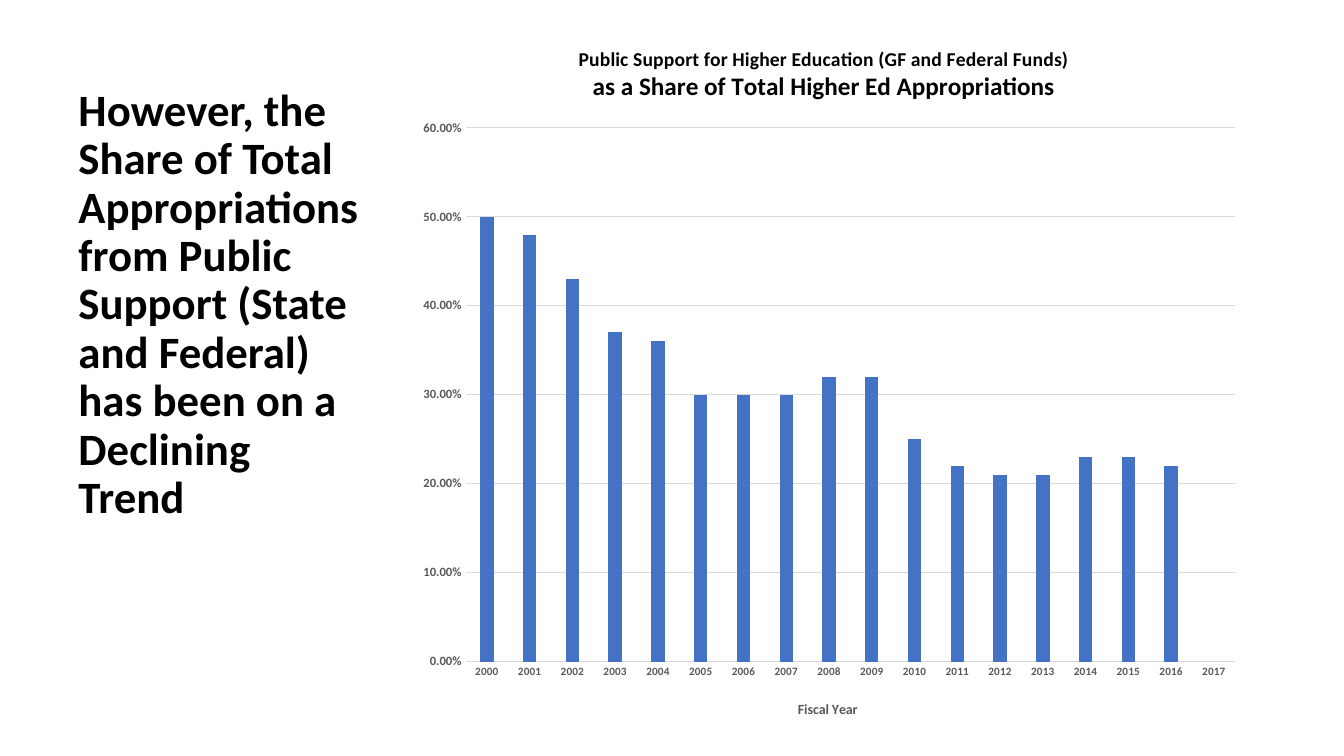
from lxml import etree
from pptx import Presentation
from pptx import util as u
from pptx.chart.data import CategoryChartData
from pptx.dml.color import RGBColor
from pptx.enum import chart as charts
from pptx.oxml.ns import qn

FONT = "Calibri"
COLORS = {"text": "000000", "label": "595959", "rule": "D9D9D9", "bar": "4472C4"}
FIRST_YEAR, LAST_YEAR = 2000, 2017
SHARES = [0.5, 0.48, 0.43, 0.37, 0.36, 0.3, 0.3, 0.3, 0.32,
          0.32, 0.25, 0.22, 0.21, 0.21, 0.23, 0.23, 0.22, None]


def color(name):
    return RGBColor.from_string(COLORS[name])


def format_font(font, size, tint="text", bold=True):
    font.name = FONT
    font.size = u.Pt(size)
    font.bold = bold
    font.color.rgb = color(tint)


def write_line(frame, words, size, tint="text", first=True, spacing=None):
    para = frame.paragraphs[0] if first else frame.add_paragraph()
    para.line_spacing = spacing
    span = para.add_run()
    span.text = words
    format_font(span.font, size, tint)


def add_text(page, words, left, top, width, height, **style):
    box = page.shapes.add_textbox(*map(u.Inches, (left, top, width, height)))
    box.text_frame.word_wrap = True
    write_line(box.text_frame, words, **style)


def place(element, **fractions):
    """Set a manual layout, in fractions of the chart area."""
    layout = element.find(qn("c:layout"))
    if layout is None:
        layout = etree.Element(qn("c:layout"))
        element.insert(1 if element.find(qn("c:tx")) is not None else 0, layout)
    manual = etree.SubElement(layout, qn("c:manualLayout"))
    if "w" in fractions:
        etree.SubElement(manual, qn("c:layoutTarget")).set("val", "inner")
    for side in "xy":
        etree.SubElement(manual, qn(f"c:{side}Mode")).set("val", "edge")
    for name, value in fractions.items():
        etree.SubElement(manual, qn(f"c:{name}")).set("val", str(value))


def format_axis(axis, size):
    axis.major_tick_mark = axis.minor_tick_mark = charts.XL_TICK_MARK.NONE
    format_font(axis.tick_labels.font, size, "label")


def format_rule(line):
    line.color.rgb = color("rule")
    line.width = u.Pt(0.75)


def add_share_chart(page, left, top, width, height):
    data = CategoryChartData(number_format="0.00%")
    data.categories = [str(year) for year in range(FIRST_YEAR, LAST_YEAR + 1)]
    data.add_series("Series 1", SHARES)
    chart = page.shapes.add_chart(
        charts.XL_CHART_TYPE.COLUMN_CLUSTERED,
        *map(u.Inches, (left, top, width, height)), data).chart
    chart.has_legend = False
    format_font(chart.font, 10, bold=False)

    plot = chart.plots[0]
    plot.gap_width, plot.overlap = 219, -27
    plot.vary_by_categories = False
    fill = plot.series[0].format.fill
    fill.solid()
    fill.fore_color.rgb = color("bar")

    years, shares = chart.category_axis, chart.value_axis
    format_axis(years, 8)
    format_rule(years.format.line)
    format_axis(shares, 9)
    shares.format.line.fill.background()
    format_rule(shares.major_gridlines.format.line)
    shares.minimum_scale, shares.maximum_scale, shares.major_unit = 0, 0.6, 0.1
    shares.tick_labels.number_format = "0.00%"
    shares.tick_labels.number_format_is_linked = False

    heading = chart.chart_title.text_frame
    write_line(heading, "Public Support for Higher Education (GF and Federal Funds)", 14)
    write_line(heading, "as a Share of Total Higher Ed Appropriations", 18, first=False)
    caption = years.axis_title.text_frame
    write_line(caption, "Fiscal Year", 10, "label")

    for frame, x, y in ((heading, 0.2, 0.03), (caption, 0.46, 0.95)):
        title = next(frame._txBody.iterancestors(qn("c:title")))
        place(title, x=x, y=y)
    place(plot._element.getparent(), x=0.07, y=0.15, w=0.91, h=0.75)


def main():
    deck = Presentation()
    deck.slide_width, deck.slide_height = u.Inches(13.33), u.Inches(7.5)
    page = deck.slides.add_slide(deck.slide_layouts[6])
    add_text(page, "However, the Share of Total Appropriations from Public Support "
             "(State and Federal) has been on a Declining Trend",
             0.68, 0.82, 3.05, 5.6, size=32, spacing=0.9)
    add_share_chart(page, 4.03, 0.21, 8.39, 7.06)
    deck.save("out.pptx")


if __name__ == "__main__":
    main()
